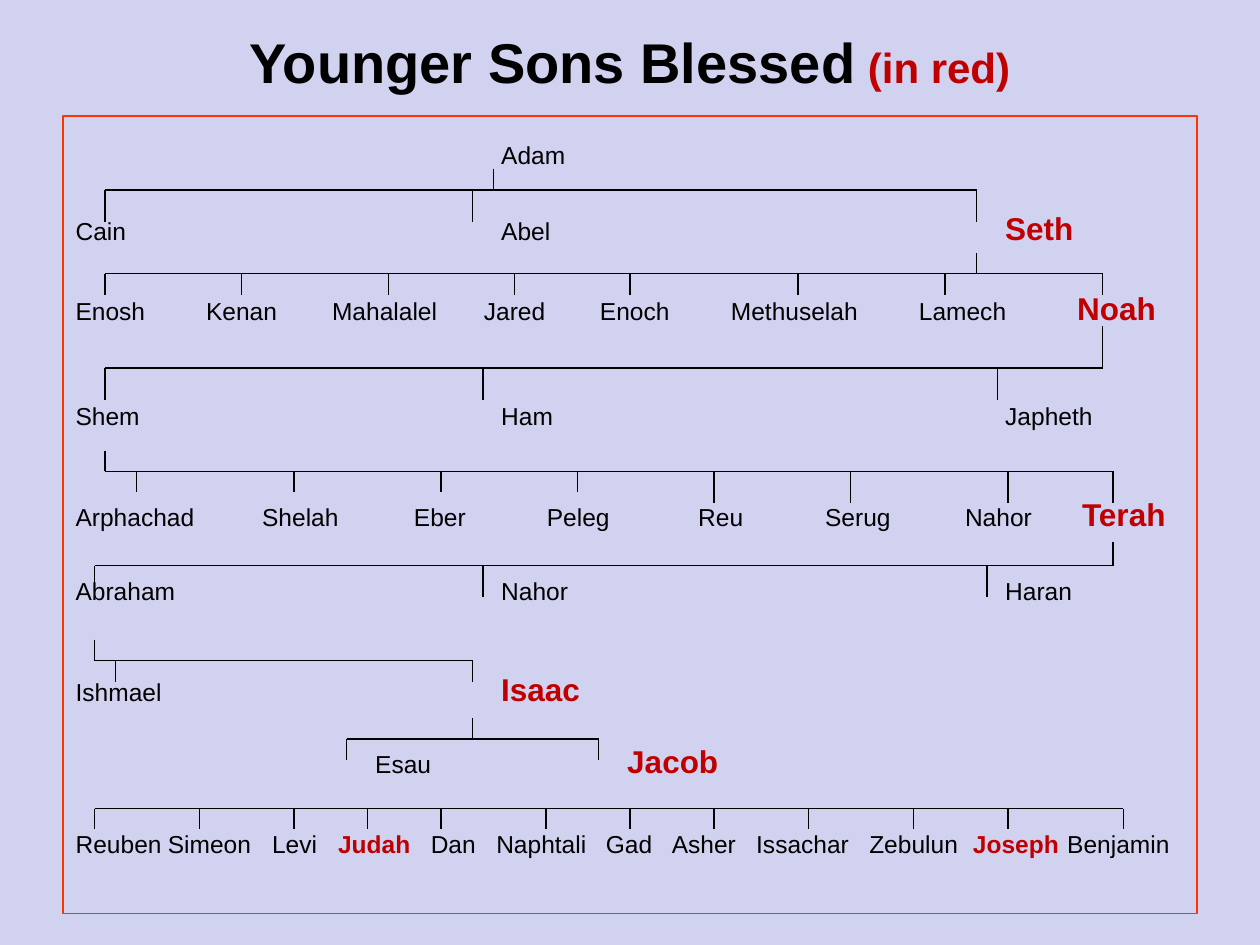
from lxml import etree
from pptx import Presentation
from pptx.dml.color import RGBColor
from pptx.enum.shapes import MSO_CONNECTOR
from pptx.enum.text import MSO_ANCHOR, MSO_AUTO_SIZE, PP_ALIGN
from pptx.oxml.ns import qn
from pptx.util import Cm, Pt

COLORS = {"ground": "D1D1F0", "ink": "000000", "blessed": "C00000", "frame": "FF3300"}
STEP = 2.54 / 12
SHORT, LONG = 0.42, 0.64


def style(font, size, color, bold):
    font.size = Pt(size)
    font.bold = bold
    font.color.rgb = RGBColor.from_string(COLORS[color])


def draw_line(x1, y1, x2, y2):
    branch = slide.shapes.add_connector(
        MSO_CONNECTOR.STRAIGHT, Cm(x1), Cm(y1), Cm(x2), Cm(y2))
    branch.line.color.rgb = RGBColor.from_string(COLORS["ink"])
    branch.line.width = Pt(0.75)
    etree.SubElement(branch._element.spPr, qn("a:effectLst"))


prs = Presentation()
prs.slide_width, prs.slide_height = Cm(25.4), Cm(19.05)
for level in prs.slide_master.element.iter(qn("p:bodyStyle")):
    level.find(qn("a:lvl1pPr")).attrib.pop("indent", None)
slide = prs.slides.add_slide(prs.slide_layouts[1])
slide.background.fill.solid()
slide.background.fill.fore_color.rgb = RGBColor.from_string(COLORS["ground"])

title = slide.shapes.title
title.left, title.top, title.width, title.height = Cm(0), Cm(0.13), Cm(25.4), Cm(2.21)
title.text_frame.vertical_anchor = MSO_ANCHOR.MIDDLE
title.text_frame.auto_size = MSO_AUTO_SIZE.NONE
heading = title.text_frame.paragraphs[0]
heading.alignment = PP_ALIGN.CENTER
heading.font.name = "Arial"
for words, size, color in [("Younger Sons Blessed", 32, "ink"), (" (in red)", 24, "blessed")]:
    run = heading.add_run()
    run.text = words
    style(run.font, size, color, True)

family = slide.placeholders[1]
family.left, family.top, family.width, family.height = Cm(1.27), Cm(2.34), Cm(22.86), Cm(16.08)
family.line.color.rgb = RGBColor.from_string(COLORS["frame"])
family.line.width = Pt(0.75)
names_frame = family.text_frame
names_frame.auto_size = MSO_AUTO_SIZE.NONE
names_frame.vertical_anchor = MSO_ANCHOR.TOP
names_frame.margin_top = Cm(0.37)

blessed_sizes = {"Seth": 18, "Noah": 18, "Terah": 18, "Isaac": 18, "Jacob": 18,
                 "Judah": 14, "Joseph": 14}
MIDDLE, RIGHT = 8.58, 18.74
rows = [
    (0, ["Adam"], [MIDDLE]),
    (24.3, ["Cain", "Abel", "Seth"], [0, MIDDLE, RIGHT]),
    (25.7, ["Enosh", "Kenan", "Mahalalel", "Jared", "Enoch", "Methuselah", "Lamech", "Noah"],
     [0, 2.63, 5.17, 8.23, 10.57, 13.21, 17, 20.19]),
    (39.2, ["Shem", "Ham", "Japheth"], [0, MIDDLE, RIGHT]),
    (38.5, ["Arphachad", "Shelah", "Eber", "Peleg", "Reu", "Serug", "Nahor", "Terah"],
     [0, 3.76, 6.82, 9.5, 12.55, 15.11, 17.93, 20.29]),
    (21.5, ["Abraham", "Nahor", "Haran"], [0, MIDDLE, RIGHT]),
    (38.5, ["Ishmael", "Isaac"], [0, MIDDLE]),
    (21.1, ["Esau", "Jacob"], [6.04, 11.12]),
    (24.9, ["Reuben", "Simeon", "Levi", "Judah", "Dan", "Naphtali", "Gad", "Asher",
            "Issachar", "Zebulun", "Joseph", "Benjamin"],
     [0, 1.86, 3.96, 5.29, 7.16, 8.48, 10.69, 12.02, 13.72, 16, 18.09, 19.99]),
]
for index, (gap, names, columns) in enumerate(rows):
    row = names_frame.add_paragraph() if index else names_frame.paragraphs[0]
    row.line_spacing = Pt(20)
    row.space_before = Pt(gap)
    row.space_after = Pt(0)
    properties = row._p.get_or_add_pPr()
    properties.set("marL", "0")
    etree.SubElement(properties, qn("a:buNone"))
    tabs = etree.SubElement(properties, qn("a:tabLst"))
    for column in filter(None, columns):
        etree.SubElement(tabs, qn("a:tab"), pos=str(int(Cm(column))), algn="l")
    row.font.name = "Arial"
    for name, column in zip(names, columns):
        run = row.add_run()
        run.text = "\t" + name if column else name
        blessed = name in blessed_sizes
        style(run.font, blessed_sizes.get(name, 14), "blessed" if blessed else "ink", blessed)

generations = [
    (3.83, (47, 3.4), [], [10, 45, 93]),
    (5.52, (93, 5.1), [10, 23, 37, 49, 60, 76, 90, 105], []),
    (7.42, (105, 6.58), [], [10, 46, 95]),
    (9.5, (10, 9.09), [13, 28, 42, 55], [68, 81, 96, 106]),
    (11.4, (106, 10.92), [], [9, 46, 94]),
    (13.32, (9, 12.9), [11, 45], []),
    (14.9, (45, 14.48), [33, 57], []),
    (16.3, None, [9, 19, 28, 35, 42, 52, 60, 68, 77, 87, 96, 107], []),
]
for bar, parent, short_drops, long_drops in generations:
    ends = short_drops + long_drops
    if parent:
        stem, stem_top = parent
        ends = ends + [stem]
        draw_line(stem * STEP, stem_top, stem * STEP, bar)
    draw_line(min(ends) * STEP, bar, max(ends) * STEP, bar)
    for drops, length in [(short_drops, SHORT), (long_drops, LONG)]:
        for drop in drops:
            draw_line(drop * STEP, bar, drop * STEP, bar + length)

prs.save("out.pptx")
